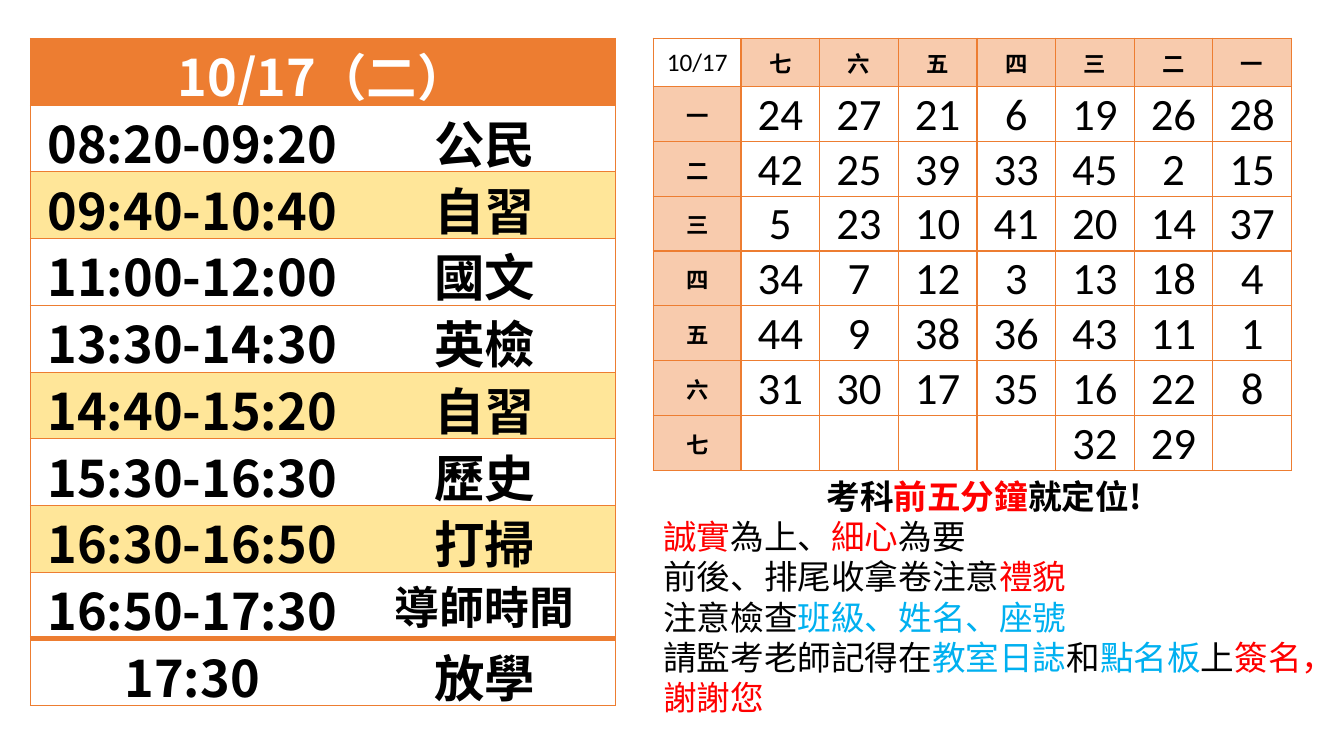
from lxml.etree import SubElement
from pptx import Presentation
from pptx.dml.color import RGBColor
from pptx.enum.text import MSO_ANCHOR, MSO_AUTO_SIZE, PP_ALIGN
from pptx.oxml.ns import qn
from pptx.util import Inches, Pt

BLACK = RGBColor(0x00, 0x00, 0x00)
WHITE = RGBColor(0xFF, 0xFF, 0xFF)
RED = RGBColor(0xFF, 0x00, 0x00)
BLUE = RGBColor(0x00, 0xB0, 0xF0)
ORANGE = RGBColor(0xED, 0x7D, 0x31)
PEACH = RGBColor(0xF8, 0xCB, 0xAD)
YELLOW = RGBColor(0xFF, 0xE6, 0x99)
CJK_FONT = "Noto Sans CJK JP"
LATIN_FONT = "Calibri"

# Content
SCHEDULE_TITLE = "10/17（二）"
SCHEDULE = [
    ("08:20-09:20", "公民"),
    ("09:40-10:40", "自習"),
    ("11:00-12:00", "國文"),
    ("13:30-14:30", "英檢"),
    ("14:40-15:20", "自習"),
    ("15:30-16:30", "歷史"),
    ("16:30-16:50", "打掃"),
    ("16:50-17:30", "導師時間"),
    ("17:30", "放學"),
]
HIGHLIGHTED = {"自習", "打掃"}
SEATS = [
    ("10/17", "七", "六", "五", "四", "三", "二", "一"),
    ("一", 24, 27, 21, 6, 19, 26, 28),
    ("二", 42, 25, 39, 33, 45, 2, 15),
    ("三", 5, 23, 10, 41, 20, 14, 37),
    ("四", 34, 7, 12, 3, 13, 18, 4),
    ("五", 44, 9, 38, 36, 43, 11, 1),
    ("六", 31, 30, 17, 35, 16, 22, 8),
    ("七", "", "", "", "", 32, 29, ""),
]
NOTES = [
    [("考科", BLACK), ("前五分鐘", RED), ("就定位!", BLACK)],
    [("誠實", RED), ("為上、", BLACK), ("細心", RED), ("為要", BLACK)],
    [("前後、排尾收拿卷注意", BLACK), ("禮貌", RED)],
    [("注意檢查", BLACK), ("班級、姓名、座號", BLUE)],
    [("請監考老師記得在", BLACK), ("教室日誌", BLUE), ("和", BLACK),
     ("點名板", BLUE), ("上", BLACK), ("簽名，謝謝您", RED)],
]


def set_east_asian_font(properties):
    SubElement(properties, qn("a:ea")).set("typeface", CJK_FONT)


def add_plain_table(slide, left, top, column_widths, row_heights):
    frame = slide.shapes.add_table(
        len(row_heights), len(column_widths), Inches(left), Inches(top),
        Inches(sum(column_widths)), Inches(sum(row_heights)))
    table = frame.table
    table.first_row = table.horz_banding = False
    for column, width in zip(table.columns, column_widths):
        column.width = Inches(width)
    for row, height in zip(table.rows, row_heights):
        row.height = Inches(height)
    return table


def set_borders(cell, widths):
    """Draw left, right, top and bottom borders; a width of 0 hides one."""
    properties = cell._tc.get_or_add_tcPr()
    for position, (side, width) in enumerate(zip("LRTB", widths)):
        line = properties.makeelement(qn(f"a:ln{side}"), {"w": str(Pt(width))})
        if width:
            fill = SubElement(line, qn("a:solidFill"))
            SubElement(fill, qn("a:srgbClr")).set("val", str(ORANGE))
        else:
            SubElement(line, qn("a:noFill"))
        properties.insert(position, line)


def fill_cell(cell, text, font_name, size, bold, color, fill, margins, anchor):
    (cell.margin_left, cell.margin_top,
     cell.margin_right, cell.margin_bottom) = map(Inches, margins)
    cell.vertical_anchor = anchor
    if fill is None:
        cell.fill.background()
    else:
        cell.fill.solid()
        cell.fill.fore_color.rgb = fill
    paragraph = cell.text_frame.paragraphs[0]
    paragraph.alignment = PP_ALIGN.CENTER
    if text == "":
        return
    run = paragraph.add_run()
    run.text = str(text)
    font = run.font
    font.name, font.size, font.bold = font_name, Pt(size), bold
    font.color.rgb = color
    set_east_asian_font(run._r.get_or_add_rPr())


def add_schedule(slide):
    table = add_plain_table(slide, 0.3, 0.38, [3.21, 2.59],
                            [0.662] * (len(SCHEDULE) + 1))
    margins = (0.07, 0, 0.07, 0)
    title = table.cell(0, 0)
    title.merge(table.cell(0, 1))
    fill_cell(title, SCHEDULE_TITLE, CJK_FONT, 36, True, WHITE, ORANGE,
              margins, MSO_ANCHOR.TOP)
    set_borders(title, (0.5, 0.5, 0.5, 0.5))
    last = len(SCHEDULE)
    for row, (time, subject) in enumerate(SCHEDULE, start=1):
        fill = YELLOW if subject in HIGHLIGHTED else None
        top = 4 if row == last else 0.5
        bottom = 4 if row == last - 1 else 0.5
        for column, text in enumerate((time, subject)):
            cell = table.cell(row, column)
            is_time = column == 0
            anchor = MSO_ANCHOR.MIDDLE if is_time and row < last else MSO_ANCHOR.TOP
            size = 32 if len(text) == 4 else 36
            fill_cell(cell, text, CJK_FONT, size, True, BLACK, fill, margins, anchor)
            sides = (0.5, 0) if is_time else (0, 0.5)
            set_borders(cell, (*sides, top, bottom))


def add_seats(slide):
    table = add_plain_table(slide, 6.48, 0.38, [0.87] + [0.78] * 7,
                            [0.48] + [0.544] * 7)
    for row, values in enumerate(SEATS):
        for column, value in enumerate(values):
            cell = table.cell(row, column)
            if row == column == 0:
                size, bold, fill = 18, False, None
            elif row == 0 or column == 0:
                size, bold, fill = 16, True, PEACH
            else:
                size, bold, fill = 32, False, None
            fill_cell(cell, value, LATIN_FONT, size, bold, BLACK, fill,
                      (0.01, 0.01, 0.01, 0), MSO_ANCHOR.MIDDLE)
            set_borders(cell, (1, 1, 1, 1))


def add_notes(slide):
    box = slide.shapes.add_textbox(Inches(6.48), Inches(4.67),
                                   Inches(6.56), Inches(2.83))
    frame = box.text_frame
    frame.word_wrap = True
    frame.auto_size = MSO_AUTO_SIZE.SHAPE_TO_FIT_TEXT
    for index, pieces in enumerate(NOTES):
        paragraph = frame.add_paragraph() if index else frame.paragraphs[0]
        paragraph.alignment = PP_ALIGN.LEFT if index else PP_ALIGN.CENTER
        paragraph.font.name = CJK_FONT
        paragraph.font.size = Pt(24)
        paragraph.font.bold = index == 0
        for text, color in pieces:
            run = paragraph.add_run()
            run.text = text
            run.font.color.rgb = color
            run.font.name = CJK_FONT
            run.font.size = Pt(24)
            run.font.bold = index == 0
            set_east_asian_font(run._r.get_or_add_rPr())


def main():
    presentation = Presentation()
    presentation.slide_width = Inches(13.33)
    presentation.slide_height = Inches(7.5)
    slide = presentation.slides.add_slide(presentation.slide_layouts[6])
    add_notes(slide)
    add_schedule(slide)
    add_seats(slide)
    presentation.save("out.pptx")


if __name__ == "__main__":
    main()
